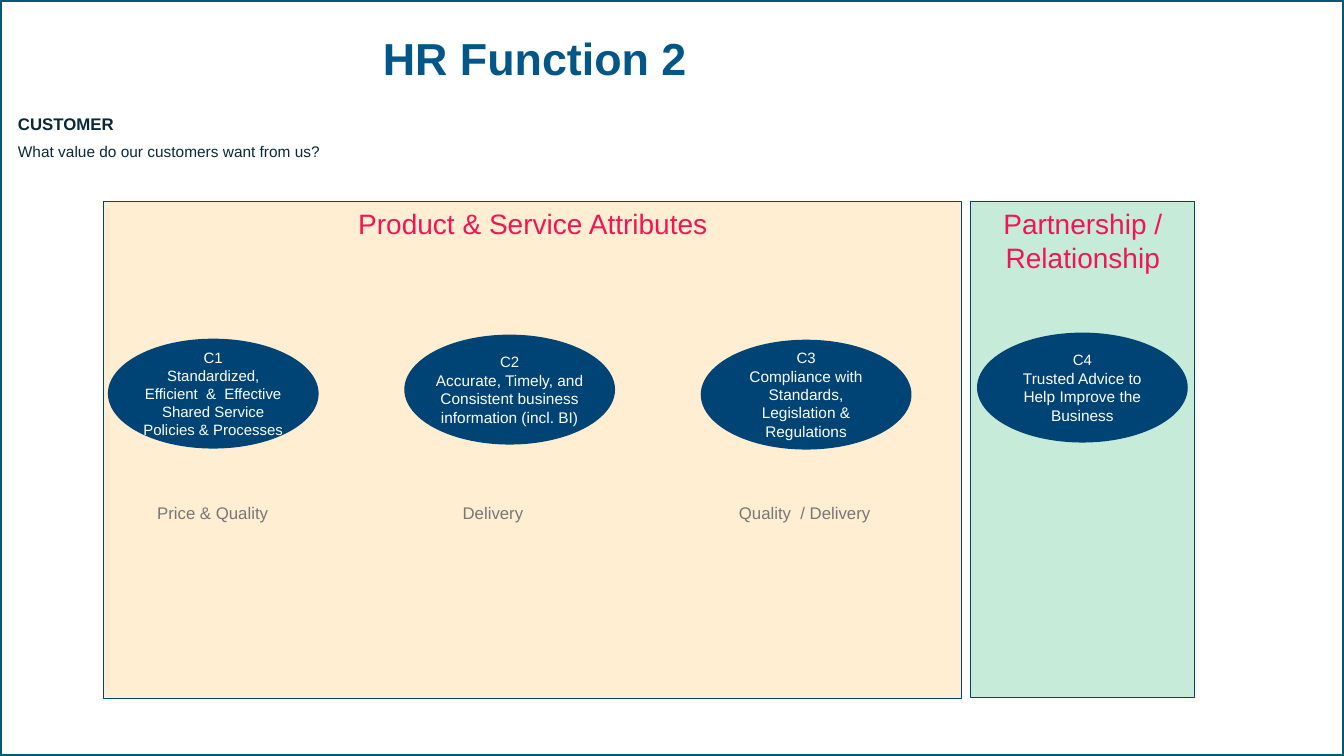
import pptx
import pptx.util
import pptx.dml.color
import pptx.enum.shapes
import pptx.enum.text
import pptx.oxml.ns
import lxml.etree

Inches = pptx.util.Inches
Pt = pptx.util.Pt
RGBColor = pptx.dml.color.RGBColor
SHAPE = pptx.enum.shapes.MSO_SHAPE
ALIGN = pptx.enum.text.PP_ALIGN
ANCHOR = pptx.enum.text.MSO_ANCHOR

FRAME = RGBColor(0x02, 0x58, 0x77)
TITLE = RGBColor(0x02, 0x57, 0x88)
NAVY = RGBColor(0x00, 0x44, 0x75)
GREEN = RGBColor(0xC7, 0xEB, 0xD9)
AMBER = RGBColor(0xFF, 0xAA, 0x1B)
PINK = RGBColor(0xF1, 0x16, 0x53)
GREY = RGBColor(0x76, 0x77, 0x79)
INK = RGBColor(0x09, 0x29, 0x39)
WHITE = RGBColor(0xFF, 0xFF, 0xFF)


class Board:
    font = "Arial"

    def __init__(self, deck):
        self.slide = deck.slides.add_slide(deck.slide_layouts[5])

    def style(self, para, size, color, bold=False, align=ALIGN.CENTER):
        para.alignment = align
        for run in para.runs:
            run.font.name = self.font
            run.font.size = Pt(size)
            run.font.bold = bold
            run.font.color.rgb = color

    def title(self, text, x, y, w, h):
        head = self.slide.shapes.title
        head.left, head.top = Inches(x), Inches(y)
        head.width, head.height = Inches(w), Inches(h)
        frame = head.text_frame
        frame.text = text
        frame.vertical_anchor = ANCHOR.MIDDLE
        frame.paragraphs[0].line_spacing = 0.9
        self.style(frame.paragraphs[0], 32, TITLE, True)

    def shape(self, kind, x, y, w, h, fill=None, line=None, width=0.75):
        item = self.slide.shapes.add_shape(
            kind, Inches(x), Inches(y), Inches(w), Inches(h))
        item.shadow.inherit = False
        if fill is None:
            item.fill.background()
        else:
            item.fill.solid()
            item.fill.fore_color.rgb = fill
        if line is None:
            item.line.fill.background()
        else:
            item.line.color.rgb = line
            item.line.width = Pt(width)
        return item

    def panel(self, text, x, y, w, h, fill, alpha=None):
        item = self.shape(SHAPE.RECTANGLE, x, y, w, h, fill, NAVY)
        if alpha is not None:
            qn = pptx.oxml.ns.qn
            tint = item.fill._xPr.find(qn("a:solidFill"))[0]
            lxml.etree.SubElement(tint, qn("a:alpha")).set("val", str(alpha * 1000))
        frame = item.text_frame
        frame.text = text
        frame.vertical_anchor = ANCHOR.TOP
        self.style(frame.paragraphs[0], 20, PINK)

    def oval(self, code, goal, x, y, size=11):
        item = self.shape(SHAPE.OVAL, x, y, 2.09, 1.09, NAVY)
        frame = item.text_frame
        frame.margin_left = frame.margin_right = 0
        frame.vertical_anchor = ANCHOR.MIDDLE
        frame.text = code
        para = frame.add_paragraph()
        para.text = goal
        self.style(frame.paragraphs[0], 10.7, WHITE)
        self.style(para, size, WHITE)

    def label(self, lines, x, y, w, h, wrap=False):
        box = self.slide.shapes.add_textbox(
            Inches(x), Inches(y), Inches(w), Inches(h))
        frame = box.text_frame
        frame.word_wrap = wrap
        for i, (text, size, color, bold) in enumerate(lines):
            para = frame.add_paragraph() if i else frame.paragraphs[0]
            para.text = text
            if i:
                para.space_before = Pt(6)
            self.style(para, size, color, bold, ALIGN.LEFT)


def main():
    deck = pptx.Presentation()
    deck.slide_width, deck.slide_height = Inches(13.33), Inches(7.5)
    board = Board(deck)

    # Frame and title
    board.shape(SHAPE.RECTANGLE, 0, 0, 13.33, 7.5, line=FRAME, width=3)
    board.title("HR Function 2", 0.37, 0.28, 9.87, 0.64)

    # Panels
    board.panel("Partnership / Relationship", 9.63, 2, 2.22, 4.92, GREEN)
    board.panel("Product & Service Attributes", 1.03, 2, 8.51, 4.93, AMBER, 20)

    # Customer goals
    board.oval("C1", "Standardized, Efficient  &  Effective Shared Service "
               "Policies & Processes", 1.07, 3.36, 10.7)
    board.oval("C2", "Accurate, Timely, and Consistent business information "
               "(incl. BI)", 4.01, 3.32)
    board.oval("C3", "Compliance with Standards, Legislation & Regulations",
               6.95, 3.37)
    board.oval("C4", "Trusted Advice to Help Improve the Business", 9.69, 3.3)

    # Attribute labels
    for text, x, w in (("Price & Quality", 1.46, 1.31),
                       ("Delivery", 4.49, 0.81),
                       ("Quality  / Delivery", 7.23, 1.52)):
        board.label([(text, 12, GREY, False)], x, 4.94, w, 0.3)

    # Customer question
    board.label([("CUSTOMER", 12, INK, True),
                 ("What value do our customers want from us?", 11, INK, False)],
                0.08, 1.08, 5.94, 0.58, wrap=True)

    deck.save("out.pptx")


if __name__ == "__main__":
    main()
